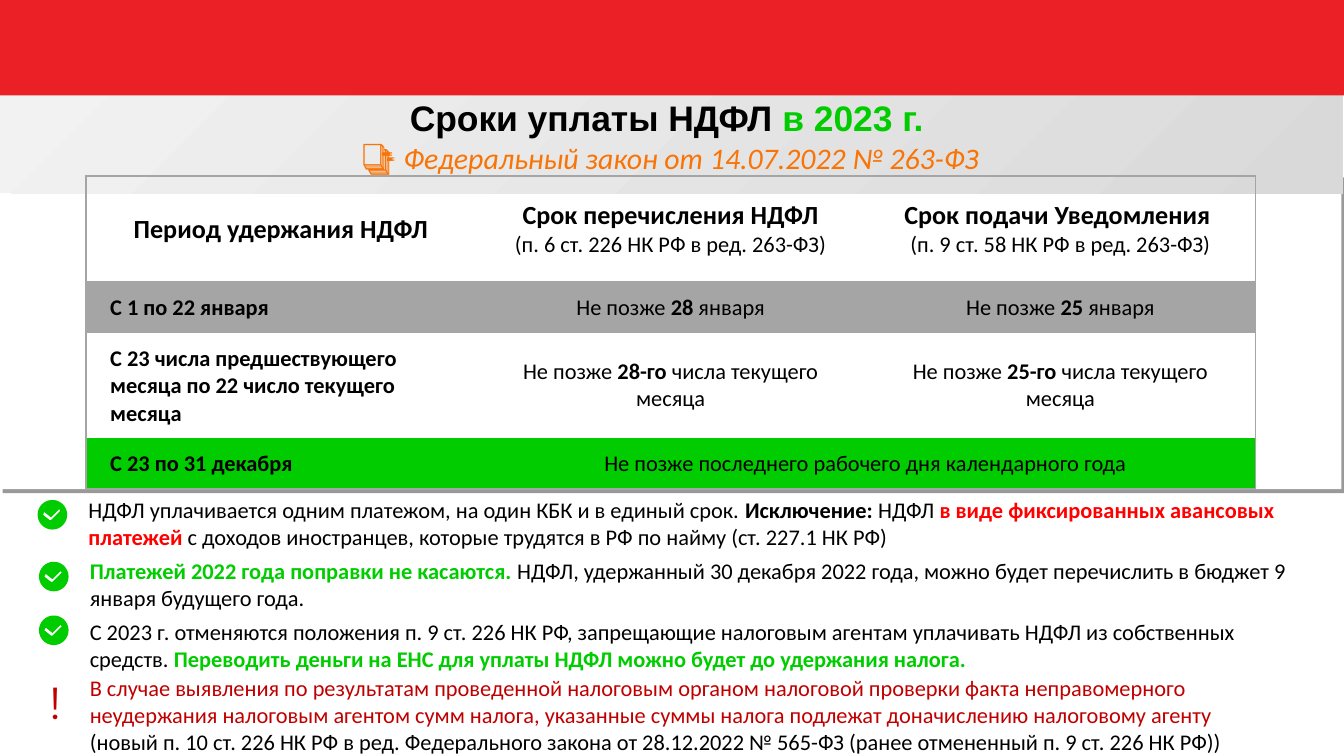
from dataclasses import dataclass
from math import cos, pi, sin

from lxml import etree
from pptx import Presentation
from pptx.dml.color import RGBColor
from pptx.enum.shapes import MSO_SHAPE as Preset
from pptx.enum.text import MSO_ANCHOR as Anchor, MSO_AUTO_SIZE as AutoSize, PP_ALIGN as Align
from pptx.oxml import parse_xml
from pptx.oxml.ns import nsdecls, qn
from pptx.util import Inches, Pt

BLACK, WHITE, GREY = "000000", "FFFFFF", "A5A5A5"
GREEN, RED, DARK_RED, ORANGE = "00CC00", "FF0000", "C00000", "F97407"
BANNER_RED = "EB2027"
NO_STYLE = "{2D5ABB26-0587-4C30-8999-92F81FD0307C}"


@dataclass(frozen=True)
class Run:
    text: str
    size: float = 12
    bold: bool = False
    color: str = BLACK
    font: str = "Calibri"
    italic: bool = False


@dataclass(frozen=True)
class Note:
    left: float
    top: float
    width: float
    height: float
    runs: list[Run]


def rgb(code: str) -> RGBColor:
    return RGBColor.from_string(code)


def write(paragraph, runs: list[Run], align=Align.LEFT) -> None:
    paragraph.alignment = align
    for part in runs:
        for index, line in enumerate(part.text.split("\n")):
            if index:
                paragraph.add_line_break()
            if not line:
                continue
            run = paragraph.add_run()
            run.text = line
            font = run.font
            font.name, font.size = part.font, Pt(part.size)
            font.bold, font.italic = part.bold, part.italic
            font.color.rgb = rgb(part.color)


def add_text(note: Note, align=Align.LEFT):
    box = slide.shapes.add_textbox(*map(Inches, (note.left, note.top, note.width, note.height)))
    frame = box.text_frame
    frame.word_wrap = True
    frame.auto_size = AutoSize.SHAPE_TO_FIT_TEXT
    write(frame.paragraphs[0], note.runs, align)
    return frame


def add_band(left: float, top: float, width: float, height: float, color: str):
    band = slide.shapes.add_shape(Preset.RECTANGLE, *map(Inches, (left, top, width, height)))
    band.shadow.inherit = False
    band.fill.solid()
    band.fill.fore_color.rgb = rgb(color)
    band.line.fill.background()
    return band


def add_check(left: float, top: float, size: float = 0.22) -> None:
    """Green disc with the tick cut out of it."""
    radius = size / 2
    turns = [2 * pi * step / 40 for step in range(40)]
    disc = [(radius + radius * cos(t), radius + radius * sin(t)) for t in turns]
    tick = [(0.1, 0.15), (0.17, 0.08), (0.16, 0.07), (0.1, 0.13),
            (0.05, 0.09), (0.04, 0.11), (0.09, 0.15)]
    disc, tick = ([(Inches(left + x), Inches(top + y)) for x, y in outline]
                  for outline in (disc, tick))
    builder = slide.shapes.build_freeform(*disc[0])
    builder.add_line_segments(disc[1:])
    builder.move_to(*tick[0])
    builder.add_line_segments(tick[1:])
    check = builder.convert_to_shape()
    check.shadow.inherit = False
    check.fill.solid()
    check.fill.fore_color.rgb = rgb(GREEN)
    check.line.fill.background()


def add_border(cell, side: str, points: float) -> None:
    border = etree.SubElement(cell._tc.get_or_add_tcPr(), qn(f"a:ln{side}"), w=str(Pt(points)))
    fill = etree.SubElement(border, qn("a:solidFill"))
    etree.SubElement(fill, qn("a:srgbClr"), val=GREY)


def fill_cell(cell, paragraphs: list[list[Run]], align, color: str | None) -> None:
    cell.vertical_anchor = Anchor.MIDDLE
    cell.margin_left = cell.margin_right = Inches(0.18)
    cell.margin_top = cell.margin_bottom = Inches(0.09)
    frame = cell.text_frame
    for index, runs in enumerate(paragraphs):
        write(frame.add_paragraph() if index else frame.paragraphs[0], runs, align)
    if color:
        cell.fill.solid()
        cell.fill.fore_color.rgb = rgb(color)
    else:
        cell.fill.background()


def deadline(day: str, rest: str) -> list[list[Run]]:
    return [[Run("Не позже "), Run(day, bold=True), Run(rest)]]


def period(text: str) -> list[list[Run]]:
    return [[Run(text, bold=True)]]


# Widescreen 16:9 slide
deck = Presentation()
deck.slide_width, deck.slide_height = Inches(10), Inches(10 * 9 / 16)
slide = deck.slides.add_slide(deck.slide_layouts[6])

# White panel with a hard shadow
panel = add_band(-0.01, 1.29, 9.99, 2.35, WHITE)
effects = panel._element.spPr.find(qn("a:effectLst"))
effects.append(parse_xml(
    f'<a:outerShdw {nsdecls("a")} blurRad="0" dist="{Pt(3)}" dir="2700000" algn="tl" '
    'rotWithShape="0"><a:srgbClr val="000000"><a:alpha val="40000"/></a:srgbClr></a:outerShdw>'))

# Title band with a radial gradient
title_band = add_band(-0.01, 0.63, 10, 0.81, "F2F2F2")
band_props = title_band._element.spPr
band_props.find(qn("a:xfrm")).set("flipV", "1")
band_props.replace(band_props.find(qn("a:solidFill")), parse_xml(
    f'<a:gradFill {nsdecls("a")} rotWithShape="1"><a:gsLst>'
    '<a:gs pos="0"><a:srgbClr val="D9D9D9"/></a:gs>'
    '<a:gs pos="100000"><a:srgbClr val="F2F2F2"/></a:gs></a:gsLst>'
    '<a:path path="circle"><a:fillToRect l="100000" t="100000"/></a:path></a:gradFill>'))

# Title and law reference
title = add_text(Note(0.02, 0.65, 9.88, 0.48, [
    Run("Сроки уплаты НДФЛ ", 19, True, font="Arial"),
    Run("в 2023 г.", 19, True, GREEN, "Arial")]), Align.CENTER)
title.auto_size = AutoSize.NONE
title.vertical_anchor = Anchor.MIDDLE
title.paragraphs[0].line_spacing = 0.9
add_text(Note(-0.01, 0.96, 10, 0.4, [
    Run("📑 ", 18, color=ORANGE),
    Run("Федеральный закон от 14.07.2022 № 263-ФЗ", 16, color=ORANGE, italic=True)]), Align.CENTER)

# Deadlines table: row height, fill, cells
deadline_rows = [
    (0.79, None, [
        [[Run("Период удержания НДФЛ", 14, True)]],
        [[Run("Срок перечисления НДФЛ", 14, True)], [Run("(п. 6 ст. 226 НК РФ в ред. 263-ФЗ)")]],
        [[Run("Срок подачи Уведомления \n", 14, True), Run("(п. 9 ст. 58 НК РФ в ред. 263-ФЗ)")]]]),
    (0.38, GREY, [period("С 1 по 22 января"),
                  deadline("28", " января"), deadline("25", " января")]),
    (0.78, None, [period("С 23 числа предшествующего месяца по 22 число текущего месяца"),
                  deadline("28-го", " числа текущего месяца"),
                  deadline("25-го", " числа текущего месяца")]),
    (0.38, GREEN, [period("С 23 по 31 декабря"),
                   [[Run("Не позже последнего рабочего дня календарного года")]], []]),
]
last_row = len(deadline_rows) - 1
table = slide.shapes.add_table(len(deadline_rows), 3, Inches(0.64), Inches(1.31),
                               Inches(8.7), Inches(2.33)).table
table.first_row = table.horz_banding = False
table._tbl.tblPr.find(qn("a:tableStyleId")).text = NO_STYLE
for column in table.columns:
    column.width = Inches(2.9)
table.cell(last_row, 1).merge(table.cell(last_row, 2))
for r, (height, color, contents) in enumerate(deadline_rows):
    table.rows[r].height = Inches(height)
    for c, paragraphs in enumerate(contents):
        cell = table.cell(r, c)
        if c == 0:
            add_border(cell, "L", 1)
        if c == 2 or cell.is_merge_origin:
            add_border(cell, "R", 1)
        if r == 0:
            add_border(cell, "T", 1)
        if r in (0, last_row):
            add_border(cell, "B", 2 if r == 0 else 1)
        fill_cell(cell, paragraphs, Align.LEFT if r and c == 0 else Align.CENTER, color)

# Notes under the table
notes = [
    Note(0.56, 3.64, 9.42, 0.5, [
        Run("НДФЛ уплачивается одним платежом, на один КБК и в единый срок. "),
        Run("Исключение:", bold=True), Run(" НДФЛ "),
        Run("в виде фиксированных авансовых платежей", bold=True, color=RED),
        Run(" с доходов иностранцев, которые трудятся в РФ по найму (ст. 227.1 НК РФ)")]),
    Note(0.57, 4.1, 9.12, 0.5, [
        Run("Платежей 2022 года поправки не касаются. ", bold=True, color=GREEN),
        Run("НДФЛ, удержанный 30 декабря 2022 года, можно будет перечислить в бюджет "
            "9 января будущего года.")]),
    Note(0.57, 4.55, 9.04, 0.5, [
        Run("С 2023 г. отменяются положения п. 9 ст. 226 НК РФ, запрещающие налоговым агентам "
            "уплачивать НДФЛ из собственных средств. "),
        Run("Переводить деньги на ЕНС для уплаты НДФЛ можно будет до удержания налога.",
            bold=True, color=GREEN)]),
    Note(0.27, 4.97, 0.47, 0.5, [Run("!", 24, color=DARK_RED, font="Montserrat")]),
    Note(0.57, 4.97, 9.34, 0.71, [
        Run("В случае выявления по результатам проведенной налоговым органом налоговой проверки "
            "факта неправомерного неудержания налоговым агентом сумм налога, указанные суммы "
            "налога подлежат доначислению налоговому агенту \n", color=DARK_RED),
        Run("(новый п. 10 ст. 226 НК РФ в ред. Федерального закона от 28.12.2022 № 565-ФЗ "
            "(ранее отмененный п. 9 ст. 226 НК РФ))")]),
]
for note in notes:
    add_text(note)
for left, top in [(0.28, 3.72), (0.29, 4.18), (0.29, 4.58)]:
    add_check(left, top)

# Top banner
add_band(0, 0, 10, 0.71, BANNER_RED)

deck.save("out.pptx")
